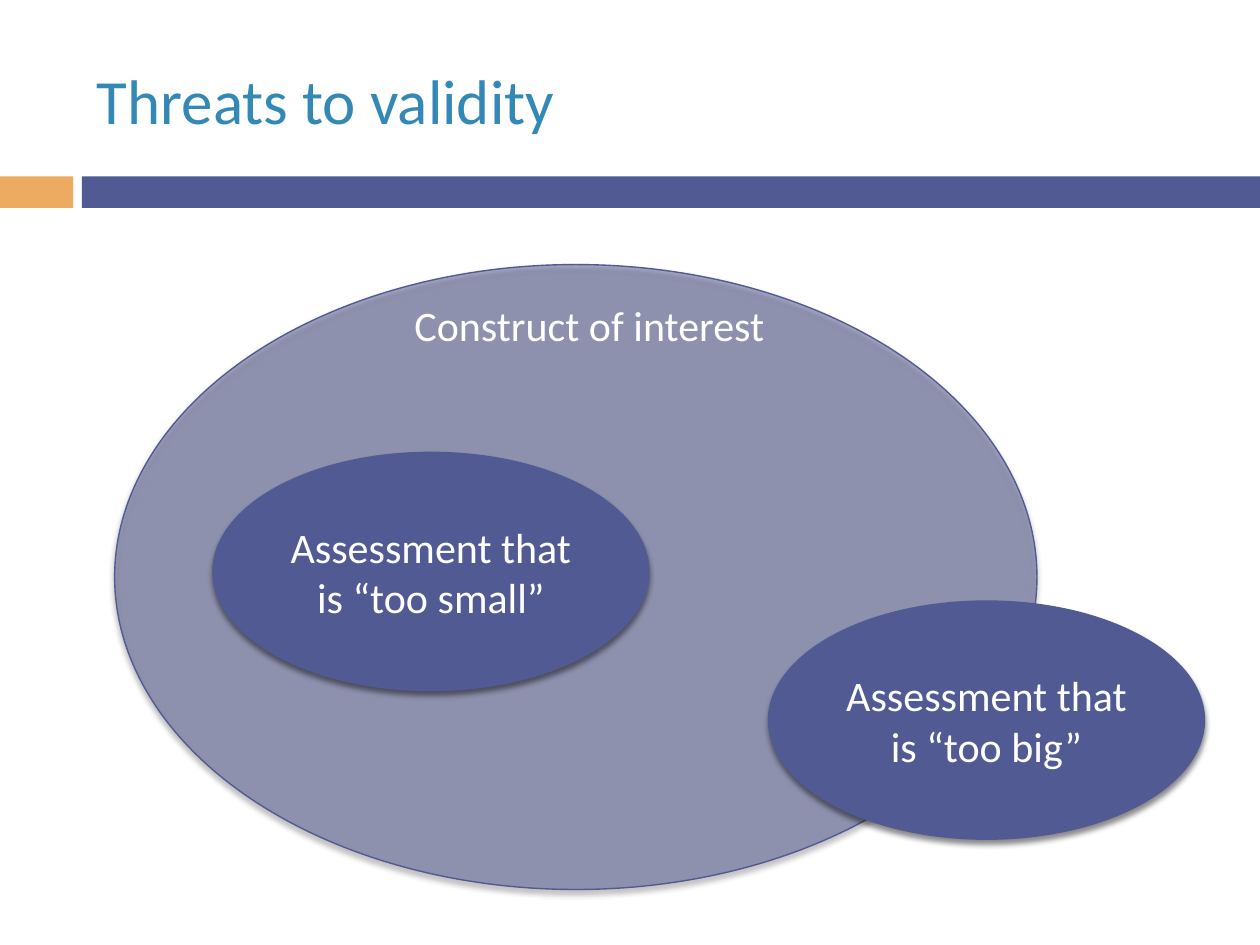
from lxml import etree
from pptx import Presentation
from pptx import util as u
from pptx.dml.color import RGBColor
from pptx.enum import shapes, text
from pptx.oxml import parse_xml
from pptx.oxml.ns import nsdecls, qn

COLORS = {"bar": "525A93", "accent": "EDAA61", "title": "3488B6", "white": "FFFFFF"}
SHADOW = (
    f'<a:effectLst {nsdecls("a")}>'
    f'<a:outerShdw blurRad="{u.Pt(3)}" dist="{u.Pt(2.4)}" dir="5400000" rotWithShape="0">'
    '<a:srgbClr val="000000"><a:alpha val="45000"/></a:srgbClr>'
    '</a:outerShdw></a:effectLst>'
)

prs = Presentation()
prs.slide_width, prs.slide_height = u.Inches(10), u.Inches(7.5)
s = prs.slides.add_slide(prs.slide_layouts[6])


def share(x, y, w, h):
    """Turn percentages of the slide's width and height into lengths."""
    W, H = prs.slide_width, prs.slide_height
    return [int(v * side / 100) for v, side in zip((x, y, w, h), (W, H, W, H))]


def write(sp, words, size=24, color="white", align=text.PP_ALIGN.LEFT,
          anchor=text.MSO_ANCHOR.MIDDLE, wrap=True):
    tf = sp.text_frame
    tf.word_wrap = wrap
    tf.vertical_anchor = anchor
    p = tf.paragraphs[0]
    p.alignment = align
    r = p.add_run()
    r.text = words
    r.font.name, r.font.size = "Calibri", u.Pt(size)
    r.font.color.rgb = RGBColor.from_string(COLORS[color])


# Header: a short accent bar, a gap, then a bar to the right edge
for x, w, color in [(0, 5.8, "accent"), (6.5, 93.5, "bar")]:
    sp = s.shapes.add_shape(shapes.MSO_SHAPE.RECTANGLE, *share(x, 18.67, w, 3.33))
    sp.shadow.inherit = False
    sp.fill.solid()
    sp.fill.fore_color.rgb = RGBColor.from_string(COLORS[color])
    sp.line.fill.background()

title = s.shapes.add_textbox(*share(6.7, 3.33, 89.2, 14.4))
write(title, "Threats to validity", size=36, color="title")

# The construct lies behind the two assessments
ellipses = [
    ((9.1, 28, 73.2, 66.13), None, 49),
    ((16.9, 47.87, 34.6, 25.2), "Assessment that is “too small”", 100),
    ((61, 63.6, 34.6, 25.2), "Assessment that is “too big”", 100),
]
for box, words, opacity in ellipses:
    sp = s.shapes.add_shape(shapes.MSO_SHAPE.OVAL, *share(*box))
    sp.fill.solid()
    sp.fill.fore_color.rgb = RGBColor.from_string(COLORS["bar"])
    sp.line.color.rgb = RGBColor.from_string(COLORS["bar"])
    sp.line.width = u.Pt(0.79)
    sp.element.spPr.append(parse_xml(SHADOW))
    if opacity < 100:
        fill = sp.element.spPr.find(qn("a:solidFill"))
        etree.SubElement(fill[0], qn("a:alpha"), val=str(opacity * 1000))
    if words:
        write(sp, words, align=text.PP_ALIGN.CENTER)

label = s.shapes.add_textbox(*share(31.9, 31.07, 30.1, 6.67))
write(label, "Construct of interest", anchor=text.MSO_ANCHOR.TOP, wrap=False)

prs.save("out.pptx")
